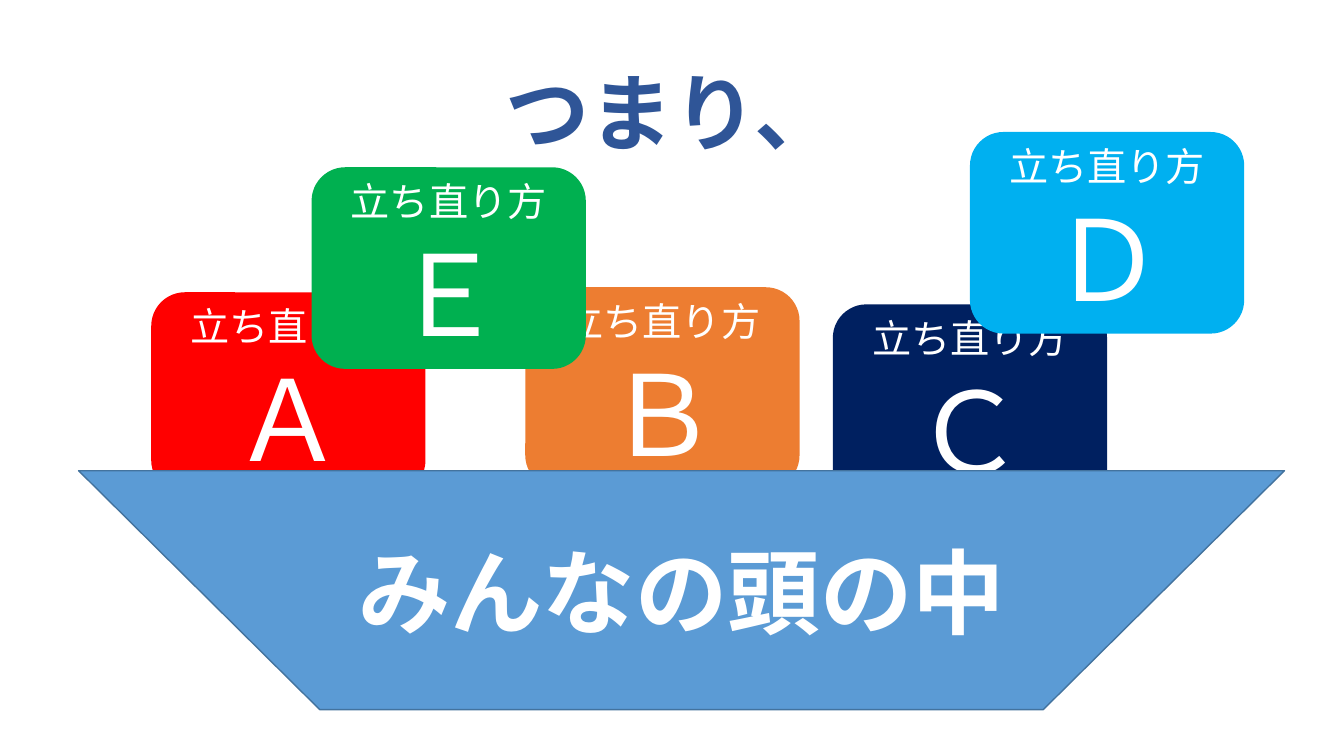
from lxml import etree
from pptx import Presentation
from pptx.dml.color import RGBColor
from pptx.enum.shapes import MSO_SHAPE
from pptx.enum.text import MSO_ANCHOR, MSO_AUTO_SIZE, PP_ALIGN
from pptx.oxml.ns import qn
from pptx.util import Inches, Pt

CARD = MSO_SHAPE.ROUNDED_RECTANGLE
BOWL = MSO_SHAPE.FLOWCHART_MANUAL_OPERATION
TOP, MIDDLE = MSO_ANCHOR.TOP, MSO_ANCHOR.MIDDLE
GROW = MSO_AUTO_SIZE.SHAPE_TO_FIT_TEXT
CENTER = PP_ALIGN.CENTER

FONT = "Noto Sans CJK JP"
WHITE = RGBColor(0xFF, 0xFF, 0xFF)
TITLE = RGBColor(0x2F, 0x55, 0x97)
RED = RGBColor(0xFF, 0x00, 0x00)
ORANGE = RGBColor(0xED, 0x7D, 0x31)
NAVY = RGBColor(0x00, 0x20, 0x60)
SKY = RGBColor(0x00, 0xB0, 0xF0)
GREEN = RGBColor(0x00, 0xB0, 0x50)
BLUE = RGBColor(0x5B, 0x9B, 0xD5)
EDGE = RGBColor(0x43, 0x73, 0x9E)


def write(shape, lines, color, bold, anchor):
    """Fill a shape with centred lines of (text, size)."""
    frame = shape.text_frame
    frame.word_wrap = True
    frame.vertical_anchor = anchor
    for i, (text, size) in enumerate(lines):
        para = frame.add_paragraph() if i else frame.paragraphs[0]
        para.alignment = CENTER
        run = para.add_run()
        run.text = text
        font = run.font
        font.size, font.bold, font.name = Pt(size), bold, FONT
        font.color.rgb = color
        # East Asian typeface
        etree.SubElement(run._r.get_or_add_rPr(), qn("a:ea"), typeface=FONT)


def block(kind, left, top, width, height, fill):
    """Add a flat shape without outline."""
    shape = slide.shapes.add_shape(
        kind, Inches(left), Inches(top), Inches(width), Inches(height))
    shape.shadow.inherit = False
    shape.fill.solid()
    shape.fill.fore_color.rgb = fill
    shape.line.fill.background()
    return shape


prs = Presentation()
prs.slide_width, prs.slide_height = Inches(13.33), Inches(7.5)
slide = prs.slides.add_slide(prs.slide_layouts[5])

# Title
title = slide.shapes.title
title.left, title.top = Inches(0), Inches(0.55)
title.width, title.height = Inches(13.33), Inches(1.11)
title.text_frame.auto_size = GROW
write(title, [("つまり、", 60)], TITLE, True, TOP)

# Cards from back to front; the bowl covers all but the last
cards = [
    ("Ａ", 1.5, 2.9, RED),
    ("Ｂ", 5.21, 2.85, ORANGE),
    ("Ｃ", 8.26, 3.02, NAVY),
    ("Ｄ", 9.62, 1.31, SKY),
    ("Ｅ", 3.09, 1.66, GREEN),
]
for name, left, top, fill in cards:
    if name == "Ｅ":
        # Bowl
        bowl = block(BOWL, 0.78, 4.67, 11.96, 2.37, BLUE)
        bowl.line.color.rgb = EDGE
        bowl.line.width = Pt(1)
        write(bowl, [("みんなの頭の中", 66)], WHITE, True, MIDDLE)
    card = block(CARD, left, top, 2.72, 2, fill)
    write(card, [("立ち直り方", 28), (name, 80)], WHITE, False, MIDDLE)

prs.save("out.pptx")
